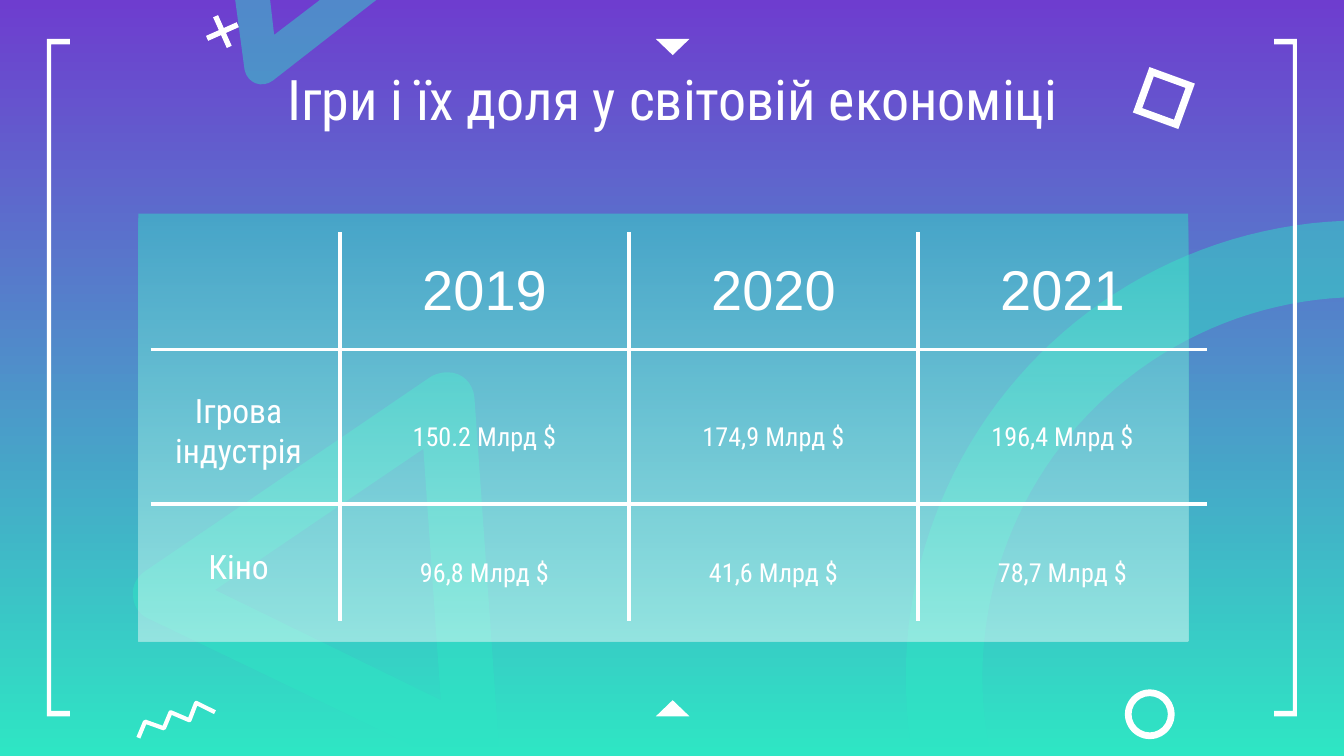
import math

from lxml import etree
from pptx import Presentation
from pptx import util as u
from pptx.dml.color import RGBColor
from pptx.enum import shapes, text
from pptx.oxml.ns import qn

PURPLE = RGBColor(0x6E, 0x3D, 0xCF)
TEAL = RGBColor(0x2E, 0xE6, 0xC4)
WHITE = RGBColor(0xFF, 0xFF, 0xFF)
FONT = "Roboto Condensed"
WIDTH = 10
HEIGHT = WIDTH * 9 / 16
GLASS = 45  # opacity in percent
BORDER = 2.25

TITLE = "Ігри і їх доля у світовій економіці"
ROWS = [
    ["", "2019", "2020", "2021"],
    ["Ігрова індустрія", "150.2 Млрд $", "174,9 Млрд $", "196,4 Млрд $"],
    ["Кіно", "96,8 Млрд $", "41,6 Млрд $", "78,7 Млрд $"],
]
COLUMN_WIDTHS = [1.41, 2.15, 2.15, 2.15]
ROW_HEIGHTS = [0.87, 1.15, 0.87]

# Outlines: a pair is a straight step, six numbers are a Bezier curve.
LARGE_TRIANGLE = [
    [(3.15, 3.34), (1.6, 4.39), (3.28, 5.21)],
    [(3.33, 2.77), (3.44, 2.77, 3.52, 2.85, 3.53, 2.96), (3.71, 5.53),
     (3.71, 5.56, 3.71, 5.6, 3.7, 5.62), (3.22, 5.62), (1.1, 4.6),
     (1.03, 4.57, 0.99, 4.5, 0.99, 4.43), (0.98, 4.36, 1.02, 4.29, 1.08, 4.25),
     (3.21, 2.8), (3.25, 2.78, 3.29, 2.77, 3.33, 2.77)],
]
TOP_CORNER = [
    [(2.8, 0), (2.03, 0.6), (1.95, 0.66, 1.84, 0.62, 1.82, 0.52), (1.75, 0),
     (2.01, 0), (2.04, 0.26), (2.38, 0)],
]
ZIGZAG = [(1.03, 5.49), (1.08, 5.37), (1.22, 5.42), (1.27, 5.3),
          (1.41, 5.36), (1.46, 5.23), (1.6, 5.3)]
BRACKET = [(0.35, 0.29), (0.35, 5.33), (0.52, 5.33), (0.52, 5.29),
           (0.38, 5.29), (0.38, 0.33), (0.52, 0.33), (0.52, 0.29)]
RING_CENTRE, RING_RADII = (10.14, 5.04), (3.4, 2.83)

# kind, left, top, width, height, rotation, adjustment
ORNAMENTS = [
    (shapes.MSO_SHAPE.ISOSCELES_TRIANGLE, 4.88, 0.29, 0.25, 0.12, 180, None),
    (shapes.MSO_SHAPE.ISOSCELES_TRIANGLE, 4.88, 5.21, 0.25, 0.12, 0, None),
    (shapes.MSO_SHAPE.FRAME, 8.48, 0.55, 0.36, 0.36, 20, 0.15),
    (shapes.MSO_SHAPE.CROSS, 1.53, 0.11, 0.25, 0.25, 336, 0.42),
    (shapes.MSO_SHAPE.DONUT, 8.37, 5.13, 0.37, 0.37, 0, 0.135),
]


def set_opacity(shape, percent):
    for color in shape._element.spPr.iter(qn("a:srgbClr")):
        etree.SubElement(color, qn("a:alpha"), val=str(percent * 1000))


def paint_gradient(fill, top, bottom):
    fill.gradient()
    fill.gradient_angle = 270
    for stop, color, position in zip(fill.gradient_stops, (top, bottom), (0, 1)):
        stop.color.rgb, stop.position = color, position


def paint(shape, color):
    shape.shadow.inherit = False
    shape.fill.solid()
    shape.fill.fore_color.rgb = color
    shape.line.fill.background()


def flatten(outline, steps=8):
    """Turn the curves of an outline into short straight steps."""
    points = []
    for step in outline:
        if len(step) == 2:
            points.append(step)
            continue
        corners = [points[-1], step[:2], step[2:4], step[4:]]
        for i in range(1, steps + 1):
            t = i / steps
            weights = [math.comb(3, k) * t**k * (1 - t) ** (3 - k) for k in range(4)]
            points.append(tuple(sum(w * c[axis] for w, c in zip(weights, corners))
                                for axis in (0, 1)))
    return points


def add_outline(slide, outlines, close=True):
    contours = [[(u.Inches(x), u.Inches(y)) for x, y in flatten(o)] for o in outlines]
    builder = slide.shapes.build_freeform(*contours[0][0])
    for index, contour in enumerate(contours):
        if index:
            builder.move_to(*contour[0])
        builder.add_line_segments(contour[1:], close=close)
    return builder.convert_to_shape()


def ring_arc(radius, steps=48):
    """Points from the right slide edge round to the bottom edge."""
    x, y = RING_CENTRE
    start = math.acos((WIDTH - x) / radius)
    end = math.pi + math.asin((HEIGHT - y) / radius)
    angles = [start + (end - start) * i / steps for i in range(steps + 1)]
    return [(x + radius * math.cos(a), y - radius * math.sin(a)) for a in angles]


def write(frame, content, size, font=FONT, space_after=0):
    paragraph = frame.paragraphs[0]
    paragraph.alignment = text.PP_ALIGN.CENTER
    paragraph.space_after = u.Pt(space_after)
    run = paragraph.add_run()
    run.text = content
    run.font.size, run.font.name = u.Pt(size), font
    run.font.color.rgb = WHITE


def set_margins(target, left, top, right, bottom):
    target.margin_left, target.margin_top = u.Inches(left), u.Inches(top)
    target.margin_right, target.margin_bottom = u.Inches(right), u.Inches(bottom)


def set_borders(cell, visible):
    properties = cell._tc.get_or_add_tcPr()
    for side in ("L", "R", "T", "B"):
        line = etree.SubElement(properties, qn("a:ln" + side), w=str(u.Pt(BORDER)))
        if side in visible:
            fill = etree.SubElement(line, qn("a:solidFill"))
            etree.SubElement(fill, qn("a:srgbClr"), val=str(WHITE))
        else:
            etree.SubElement(line, qn("a:noFill"))


def add_background(slide):
    paint_gradient(slide.background.fill, PURPLE, TEAL)
    outer, inner = map(ring_arc, RING_RADII)
    for outlines in (LARGE_TRIANGLE, TOP_CORNER, [outer + inner[::-1]]):
        shape = add_outline(slide, outlines)
        paint(shape, TEAL)
        set_opacity(shape, GLASS)
    for kind, left, top, width, height, rotation, adjustment in ORNAMENTS:
        shape = slide.shapes.add_shape(kind, *map(u.Inches, (left, top, width, height)))
        paint(shape, WHITE)
        shape.rotation = rotation
        if adjustment is not None:
            shape.adjustments[0] = adjustment
    for bracket in (BRACKET, [(WIDTH - x, y) for x, y in BRACKET]):
        paint(add_outline(slide, [bracket]), WHITE)
    zigzag = add_outline(slide, [ZIGZAG], close=False)
    zigzag.shadow.inherit = False
    zigzag.fill.background()
    zigzag.line.color.rgb, zigzag.line.width = WHITE, u.Pt(2.25)


def add_figures(slide):
    panel = slide.shapes.add_shape(shapes.MSO_SHAPE.ROUNDED_RECTANGLE,
                                   *map(u.Inches, (1.03, 1.59, 7.81, 3.18)))
    panel.adjustments[0] = 0
    paint(panel, TEAL)
    paint_gradient(panel.fill, TEAL, WHITE)
    set_opacity(panel, GLASS)

    size = (sum(COLUMN_WIDTHS), sum(ROW_HEIGHTS))
    table = slide.shapes.add_table(len(ROWS), len(COLUMN_WIDTHS),
                                   *map(u.Inches, (1.12, 1.73, *size))).table
    table.first_row = table.horz_banding = False
    for column, width in zip(table.columns, COLUMN_WIDTHS):
        column.width = u.Inches(width)
    last_row, last_column = len(ROWS) - 1, len(COLUMN_WIDTHS) - 1
    for r, row in enumerate(ROWS):
        table.rows[r].height = u.Inches(ROW_HEIGHTS[r])
        for c, content in enumerate(row):
            cell = table.cell(r, c)
            set_borders(cell, "L" * (c > 0) + "R" * (c < last_column)
                        + "T" * (r > 0) + "B" * (r < last_row))
            cell.fill.background()
            cell.vertical_anchor = text.MSO_ANCHOR.MIDDLE
            if r == 0:
                set_margins(cell, 0.1, 0.1, 0.1, 0.1)
                if content:
                    write(cell.text_frame, content, 30, font="Arial")
            elif c == 0:
                set_margins(cell, 0.1, 0.18, 0.2, 0.1)
                write(cell.text_frame, content, 18)
            else:
                set_margins(cell, 0.1, 0.16, 0.1, 0)
                write(cell.text_frame, content, 14, space_after=16)


def main():
    presentation = Presentation()
    presentation.slide_width, presentation.slide_height = u.Inches(WIDTH), u.Inches(HEIGHT)
    slide = presentation.slides.add_slide(presentation.slide_layouts[6])
    add_background(slide)
    title = slide.shapes.add_textbox(*map(u.Inches, (1.03, 0.38, 7.95, 0.77))).text_frame
    title.word_wrap = True
    title.vertical_anchor = text.MSO_ANCHOR.TOP
    set_margins(title, 0.1, 0.1, 0.1, 0.1)
    write(title, TITLE, 30)
    add_figures(slide)
    presentation.save("out.pptx")


if __name__ == "__main__":
    main()
